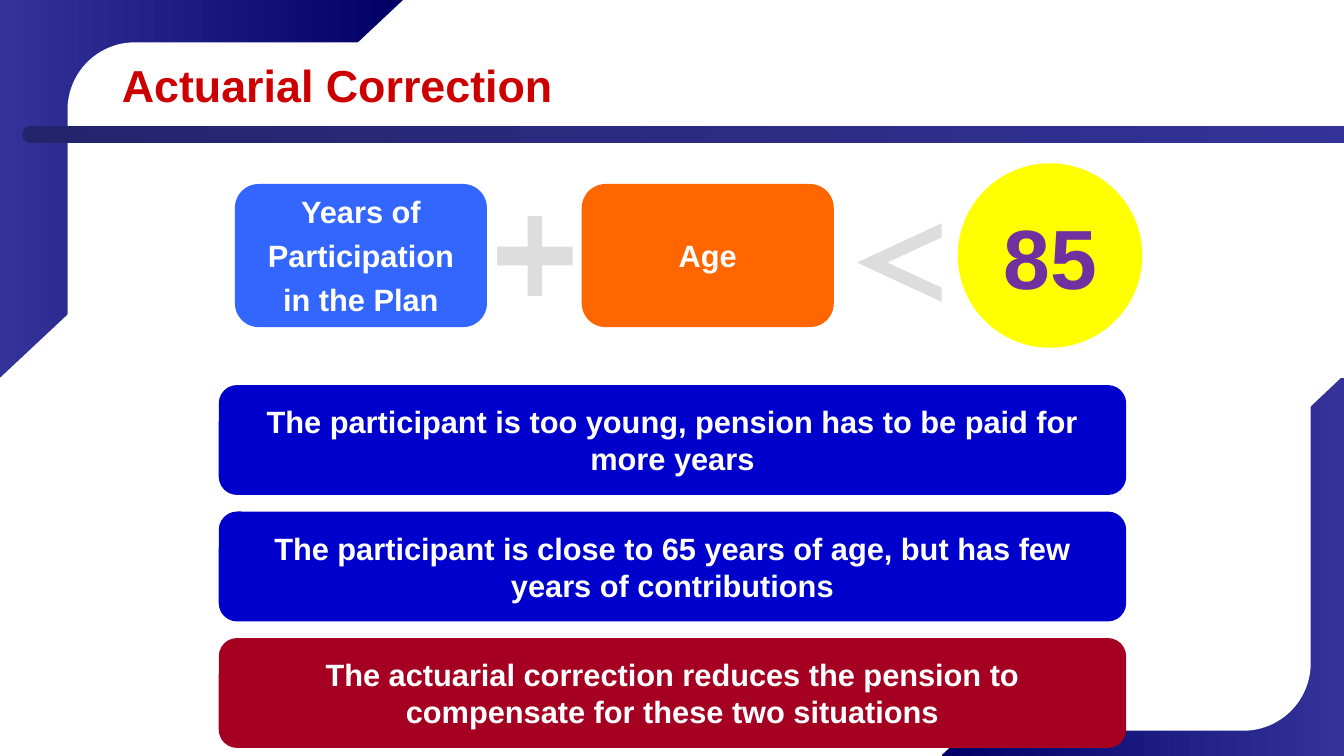
from pptx import Presentation
from pptx.dml.color import RGBColor
from pptx.enum.shapes import MSO_SHAPE as Kind
from pptx.enum.text import MSO_ANCHOR, PP_ALIGN
from pptx.util import Inches, Pt

FONT = {"name": "Arial", "bold": True}
FRAME = {"vertical_anchor": MSO_ANCHOR.MIDDLE}
NAVY, INDIGO, WHITE, GREY = "000066", "333399", "FFFFFF", "DDDDDD"


def tint(code):
    """Turn a hex string into a colour."""
    return RGBColor.from_string(code)


def apply(item, values):
    """Set each named value on an item."""
    for key, value in values.items():
        setattr(item, key, value)


def paint(shape, *codes):
    """Fill a shape plainly, or from left to right with two colours."""
    shape.shadow.inherit = False
    shape.line.fill.background()
    if len(codes) == 1:
        shape.fill.solid()
        shape.fill.fore_color.rgb = tint(codes[0])
        return
    shape.fill.gradient()
    shape.fill.gradient_angle = 0
    for stop, code in zip(shape.fill.gradient_stops, codes):
        stop.color.rgb = tint(code)


def block(slide, kind, box, *codes, adj=None, flip=None):
    """Add a painted preset shape."""
    shape = slide.shapes.add_shape(kind, *map(Inches, box))
    paint(shape, *codes)
    if adj is not None:
        shape.adjustments[0] = adj
    if flip:
        shape._element.spPr.xfrm.set(flip, "1")
    return shape


def write(shape, lines, size, code, wrap=True, align=PP_ALIGN.CENTER, gap=0.23):
    """Write one paragraph per line into a shape."""
    frame = shape.text_frame
    apply(frame, {**FRAME, "word_wrap": wrap})
    for i, line in enumerate(lines):
        para = frame.add_paragraph() if i else frame.paragraphs[0]
        apply(para, {"alignment": align, "space_before": Pt(round(size * gap))})
        run = para.add_run()
        run.text = line
        apply(run.font, {**FONT, "size": Pt(size)})
        run.font.color.rgb = tint(code)


def corner(slide, box, cut, flip, *codes):
    """Draw a gradient corner cut off by a white triangle."""
    block(slide, Kind.RECTANGLE, box, *codes)
    block(slide, Kind.RIGHT_TRIANGLE, cut, WHITE, flip=flip)


def backdrop(slide, wide, high):
    """Draw the corners, the white panel and the rule."""
    half = high / 2
    corner(slide, (wide - 3.99, half, 3.99, half),
           (wide - 4, 3.72, 4, 3.78), "flipV", NAVY, INDIGO)
    top = (0, 0, 4, half)
    corner(slide, top, top, "flipH", INDIGO, NAVY)
    for x, y in ((0, half), (wide - 4.11, 0)):
        block(slide, Kind.RECTANGLE, (x, y, 4.11, half), WHITE)
    panel = (0.67, 0.42, 12.33, 6.83)
    block(slide, Kind.ROUNDED_RECTANGLE, panel, WHITE, adj=0.098)
    rule = (0.22, 1.25, 13.56, 0.17)
    block(slide, Kind.ROUNDED_RECTANGLE, rule, "24246D", INDIGO, adj=0.5)


def heading(slide, box, text):
    """Write the slide title."""
    label = slide.shapes.add_textbox(*map(Inches, box))
    write(label, [text], 32, "CC0000", align=PP_ALIGN.LEFT, gap=0)


def less(slide, x, y, wide, high):
    """Draw a less-than sign."""
    mid, arm, tip = y + high / 2, 0.14, x + 0.3
    right, low = x + wide, y + high
    pen = slide.shapes.build_freeform(Inches(right), Inches(low), scale=1.0)
    points = [(x, mid), (right, y), (right, y + arm), (tip, mid), (right, low - arm)]
    pen.add_line_segments([(Inches(a), Inches(b)) for a, b in points])
    paint(pen.convert_to_shape(), GREY)


def formula(slide, x, y, wide, high):
    """Draw the sum of two terms compared with the limit."""
    mid = y + high / 2
    terms = [(["Years of", "Participation", "in the Plan"], "3366FF"),
             (["Age"], "FF6600")]
    for i, (lines, code) in enumerate(terms):
        box = (x + i * 3.44, mid - 0.71, 2.5, 1.42)
        write(block(slide, Kind.ROUNDED_RECTANGLE, box, code),
              lines, 22, WHITE, wrap=False)
    block(slide, Kind.CROSS, (x + 2.6, mid - 0.39, 0.75, 0.79), GREY, adj=0.403)
    less(slide, x + 6.17, mid - 0.32, 0.84, 0.78)
    ring = block(slide, Kind.OVAL, (x + wide - high, y, high, high), "FFFF00")
    write(ring, ["85"], 60, "7030A0", wrap=False)


def notes(slide, x, y, wide, high):
    """Stack the explanations at equal steps."""
    rows = [
        ("The participant is too young, pension has to be paid for more years", "0000CC"),
        ("The participant is close to 65 years of age, but has few years of contributions",
         "0000CC"),
        ("The actuarial correction reduces the pension to compensate for these two situations",
         "A50021"),
    ]
    tall = 1.09
    step = (high - tall) / (len(rows) - 1)
    for i, (text, code) in enumerate(rows):
        bar = block(slide, Kind.ROUNDED_RECTANGLE, (x, y + i * step, wide, tall), code)
        write(bar, [text], 22, WHITE)


def main():
    """Build and save the slide."""
    deck = Presentation()
    wide, high = 13.33, 7.5
    apply(deck, {"slide_width": Inches(wide), "slide_height": Inches(high)})
    slide = deck.slides.add_slide(deck.slide_layouts[6])
    backdrop(slide, wide, high)
    heading(slide, (1.11, 0.5, 11.56, 0.67), "Actuarial Correction")
    formula(slide, 2.33, 1.62, 9, 1.83)
    notes(slide, 2.17, 3.82, 9, 3.6)
    deck.save("out.pptx")


if __name__ == "__main__":
    main()
